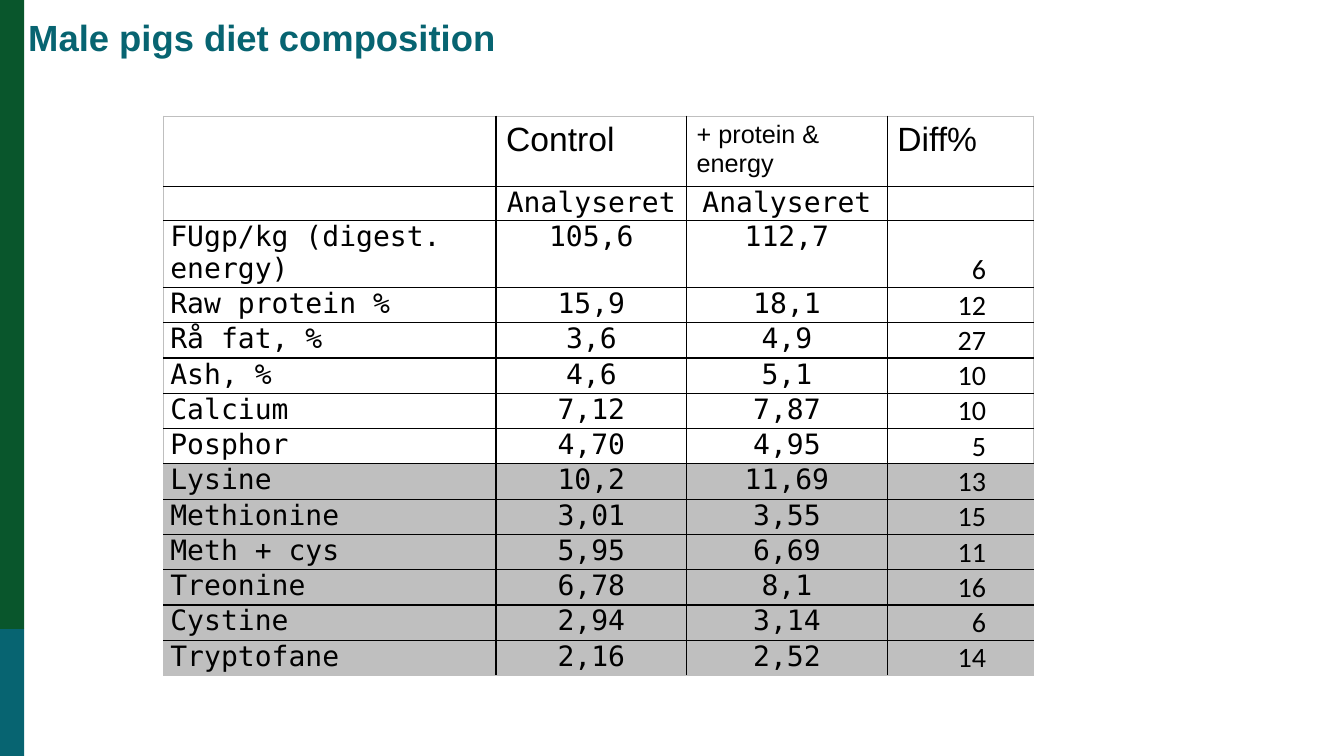
from lxml import etree
from pptx import Presentation
from pptx.dml.color import RGBColor
from pptx.enum.shapes import MSO_SHAPE
from pptx.enum.text import MSO_ANCHOR, PP_ALIGN
from pptx.oxml.ns import qn
from pptx.util import Inches, Pt

RECTANGLE = MSO_SHAPE.RECTANGLE
LEFT, CENTER, RIGHT = PP_ALIGN.LEFT, PP_ALIGN.CENTER, PP_ALIGN.RIGHT
TOP, MIDDLE, BOTTOM = MSO_ANCHOR.TOP, MSO_ANCHOR.MIDDLE, MSO_ANCHOR.BOTTOM

WIDTH, HEIGHT = Inches(13.33), Inches(7.5)
BAND_WIDTH = Inches(0.24)
GREEN_SHARE = 0.832
COLORS = {
    "green": "09562C",
    "teal": "076471",
    "black": "000000",
    "gray": "BFBFBF",
}
SANS, MONO, DIGITS = "Arial", "DejaVu Sans Mono", "Calibri"

COLUMN_WIDTHS = [3.3, 1.89, 1.99, 1.45]
HEADER_HEIGHTS = [0.66, 0.32, 0.65]
NUTRIENT_HEIGHT = 0.35
FIRST_AMINO_ROW = 8
DIET = [
    ("", "Control", "+ protein & energy", "Diff%"),
    ("", "Analyseret", "Analyseret", ""),
    ("FUgp/kg (digest. energy)", "105,6", "112,7", "6"),
    ("Raw protein %", "15,9", "18,1", "12"),
    ("Rå fat, %", "3,6", "4,9", "27"),
    ("Ash, %", "4,6", "5,1", "10"),
    ("Calcium", "7,12", "7,87", "10"),
    ("Posphor", "4,70", "4,95", "5"),
    ("Lysine", "10,2", "11,69", "13"),
    ("Methionine", "3,01", "3,55", "15"),
    ("Meth + cys", "5,95", "6,69", "11"),
    ("Treonine", "6,78", "8,1", "16"),
    ("Cystine", "2,94", "3,14", "6"),
    ("Tryptofane", "2,16", "2,52", "14"),
]


def rgb(name):
    """Return the named colour."""
    return RGBColor.from_string(COLORS[name])


def write(frame, text, font, size, color="black", align=LEFT, bold=False):
    """Fill a text frame with one formatted paragraph."""
    paragraph = frame.paragraphs[0]
    paragraph.text = text
    paragraph.alignment = align
    for run in paragraph.runs:
        run.font.name = font
        run.font.size = Pt(size)
        run.font.bold = bold
        run.font.color.rgb = rgb(color)


def set_margins(target, left, top, right, bottom):
    """Set the four inner margins of a cell or text frame in inches."""
    target.margin_left, target.margin_top = Inches(left), Inches(top)
    target.margin_right, target.margin_bottom = Inches(right), Inches(bottom)


def add_band(slide, top_share, height_share, color):
    """Draw one part of the coloured band at the left edge."""
    band = slide.shapes.add_shape(
        RECTANGLE, 0, int(HEIGHT * top_share), BAND_WIDTH, int(HEIGHT * height_share)
    )
    band.shadow.inherit = False
    band.fill.solid()
    band.fill.fore_color.rgb = rgb(color)
    band.line.fill.background()


def add_title(slide, text):
    """Write the slide title beside the band."""
    title = slide.shapes.add_textbox(
        int(WIDTH * 0.021), 0, int(WIDTH * 0.77), int(HEIGHT * 0.104)
    )
    frame = title.text_frame
    frame.word_wrap = True
    frame.vertical_anchor = MIDDLE
    set_margins(frame, 0, 0, 0, 0)
    write(frame, text, SANS, 26, "teal", bold=True)
    frame.paragraphs[0].line_spacing = 0.9


def set_borders(cell, row, column):
    """Rule the cell in black inside the table and thin gray at its rim."""
    rim = {
        "a:lnL": column == 0,
        "a:lnR": column == len(COLUMN_WIDTHS) - 1,
        "a:lnT": row == 0,
        "a:lnB": row == len(DIET) - 1,
    }
    properties = cell._tc.get_or_add_tcPr()
    for position, (side, outer) in enumerate(rim.items()):
        border = etree.Element(qn(side), w=str(Pt(0.5 if outer else 1)))
        fill = etree.SubElement(border, qn("a:solidFill"))
        color = COLORS["gray" if outer else "black"]
        etree.SubElement(fill, qn("a:srgbClr"), val=color)
        properties.insert(position, border)


def fill_cell(cell, row, column, text):
    """Write and style one cell by its place in the table."""
    if row >= FIRST_AMINO_ROW:
        cell.fill.solid()
        cell.fill.fore_color.rgb = rgb("gray")
    else:
        cell.fill.background()
    set_borders(cell, row, column)
    cell.vertical_anchor = TOP
    if row == 0:
        set_margins(cell, 0.1, 0.05, 0.1, 0.05)
        write(cell.text_frame, text, SANS, 18 if column == 2 else 24)
    elif row > 1 and column == 3:
        set_margins(cell, 0.01, 0.01, 0.47, 0)
        cell.vertical_anchor = BOTTOM
        write(cell.text_frame, text, DIGITS, 20, align=RIGHT)
    else:
        set_margins(cell, 0.07, 0, 0.07, 0)
        write(cell.text_frame, text, MONO, 20, align=CENTER if column else LEFT)


def add_diet_table(slide):
    """Build the table of feed analyses."""
    nutrient_count = len(DIET) - len(HEADER_HEIGHTS)
    heights = HEADER_HEIGHTS + [NUTRIENT_HEIGHT] * nutrient_count
    table = slide.shapes.add_table(
        len(DIET), len(COLUMN_WIDTHS), Inches(1.62), Inches(1.15),
        Inches(sum(COLUMN_WIDTHS)), Inches(sum(heights)),
    ).table
    table.first_row = table.horz_banding = False
    for column, width in zip(table.columns, COLUMN_WIDTHS):
        column.width = Inches(width)
    for row, (texts, height) in enumerate(zip(DIET, heights)):
        table.rows[row].height = Inches(height)
        for column, text in enumerate(texts):
            fill_cell(table.cell(row, column), row, column, text)


def main():
    """Build and save the diet slide."""
    deck = Presentation()
    deck.slide_width, deck.slide_height = WIDTH, HEIGHT
    slide = deck.slides.add_slide(deck.slide_layouts[6])
    add_band(slide, GREEN_SHARE, 1 - GREEN_SHARE, "teal")
    add_band(slide, 0, GREEN_SHARE, "green")
    add_title(slide, "Male pigs diet composition")
    add_diet_table(slide)
    deck.save("out.pptx")


if __name__ == "__main__":
    main()
